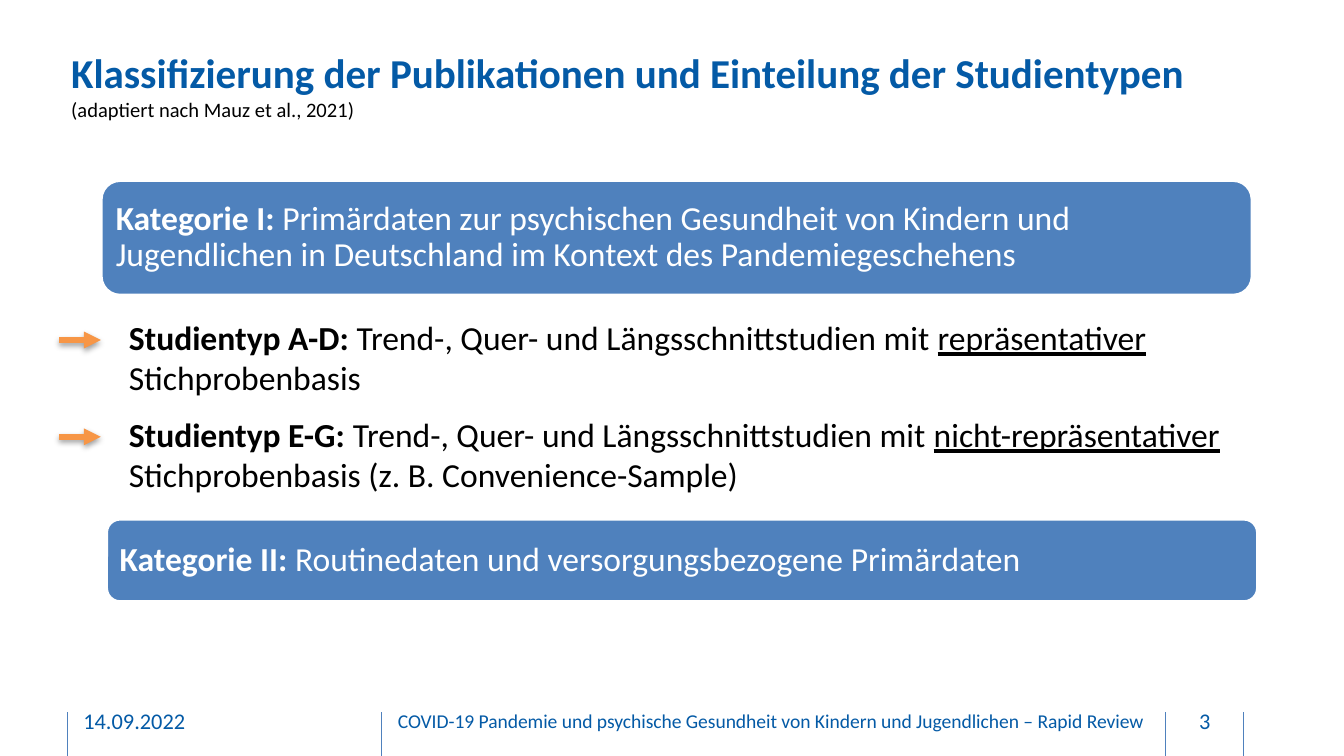
from collections import namedtuple
from dataclasses import dataclass
from lxml import etree
from pptx import Presentation
from pptx import util as u
from pptx.dml.color import RGBColor
from pptx.enum import shapes, text
from pptx.oxml import parse_xml
from pptx.oxml.ns import nsdecls, qn

Box = namedtuple("Box", "left top width height")
Run = namedtuple("Run", "text bold underline", defaults=(False, False))


@dataclass(frozen=True)
class Theme:
    font: str = "Calibri"
    heading: str = "045AA6"
    panel: str = "4F81BD"
    accent: str = "F79646"
    ink: str = "000000"
    paper: str = "FFFFFF"
    title_size: float = 22
    body_size: float = 18
    footer_size: float = 12
    footer_title_size: float = 10.5
    source_size: float = 11


THEME = Theme()
WIDTH = 10
HEIGHT = WIDTH * 9 / 16


def emu(box):
    return [u.Inches(v) for v in box]


def style(font, size, color, bold=None):
    font.name, font.size, font.bold = THEME.font, u.Pt(size), bold
    font.color.rgb = RGBColor.from_string(color)


def frame(sp, insets, anchor=text.MSO_ANCHOR.MIDDLE):
    tf = sp.text_frame
    tf.word_wrap = True
    tf.vertical_anchor = anchor
    tf.margin_left, tf.margin_top, tf.margin_right, tf.margin_bottom = emu(insets)
    return tf


def fill_runs(p, runs, color):
    style(p.font, THEME.body_size, color)
    p.alignment = text.PP_ALIGN.LEFT
    for run in runs:
        r = p.add_run()
        r.text = run.text
        r.font.bold = run.bold
        if run.underline:
            r.font.underline = True


def add_line(s, x1, y1, x2, y2, color, width):
    ln = s.shapes.add_connector(shapes.MSO_CONNECTOR.STRAIGHT, *emu((x1, y1, x2, y2)))
    ln.line.color.rgb = RGBColor.from_string(color)
    ln.line.width = u.Pt(width)
    effects = etree.SubElement(ln._element.spPr, qn("a:effectLst"))
    return ln, effects


def add_arrow(s, x1, x2, y):
    ln, effects = add_line(s, x1, y, x2, y, THEME.accent, 3)
    etree.SubElement(ln.line._get_or_add_ln(), qn("a:tailEnd"), type="triangle")
    effects.append(parse_xml(
        f'<a:outerShdw {nsdecls("a")} blurRad="{u.Pt(3.1)}" dist="{u.Pt(1.6)}" '
        f'dir="5400000" rotWithShape="0"><a:srgbClr val="{THEME.ink}">'
        '<a:alpha val="38000"/></a:srgbClr></a:outerShdw>'))


def add_heading(s, box, title, source):
    sp = s.shapes.title
    sp.left, sp.top, sp.width, sp.height = emu(box)
    tf = frame(sp, (0, 0, 0, 0))
    tf.auto_size = text.MSO_AUTO_SIZE.NONE
    p = tf.paragraphs[0]
    p.alignment = text.PP_ALIGN.LEFT
    r = p.add_run()
    r.text = title
    style(r.font, THEME.title_size, THEME.heading, True)
    p.add_line_break()
    r = p.add_run()
    r.text = source
    style(r.font, THEME.source_size, THEME.ink, False)


def add_category(s, box, runs):
    sp = s.shapes.add_shape(shapes.MSO_SHAPE.ROUNDED_RECTANGLE, *emu(box))
    sp.shadow.inherit = False
    sp.fill.solid()
    sp.fill.fore_color.rgb = RGBColor.from_string(THEME.panel)
    sp.line.color.rgb = RGBColor.from_string(THEME.paper)
    sp.line.width = u.Pt(2)
    p = frame(sp, (0.07, 0.07, 0.07, 0.07)).paragraphs[0]
    p.line_spacing = 0.9
    fill_runs(p, runs, THEME.paper)


def add_study_type(s, box, runs):
    arrow_length, text_start = 0.31, 0.42
    sp = s.shapes.add_textbox(*emu((box.left + text_start, box.top,
                                    box.width - text_start, box.height)))
    tf = frame(sp, (0.1, 0.05, 0.1, 0.05), text.MSO_ANCHOR.TOP)
    fill_runs(tf.paragraphs[0], runs, THEME.ink)
    add_arrow(s, box.left, box.left + arrow_length, box.top + 0.31 * box.height)


def add_footer(s, box, fields):
    bottom = box.top + box.height
    rules = [box.left + offset for offset in (0, 2.34, 8.17, box.width)]
    for x in rules:
        add_line(s, x, box.top + 0.09, x, bottom, THEME.panel, 0.5)
    for (label, size, align, gap), x1, x2 in zip(fields, rules, rules[1:]):
        sp = s.shapes.add_textbox(*emu((x1 + gap, box.top, x2 - x1 - 1.5 * gap, 0.3)))
        p = frame(sp, (0, 0.05, 0, 0.05)).paragraphs[0]
        p.text = label
        p.alignment = align
        style(p.font, size, THEME.heading)


def build_slide(prs):
    s = prs.slides.add_slide(prs.slide_layouts.get_by_name("Title Only"))
    add_heading(s, Box(0.53, 0.24, 8.73, 0.78),
                "Klassifizierung der Publikationen und Einteilung der Studientypen",
                "(adaptiert nach Mauz et al., 2021)")
    add_category(s, Box(0.75, 1.34, 8.57, 0.86), [
        Run("Kategorie I: ", True),
        Run("Primärdaten zur psychischen Gesundheit von Kindern und Jugendlichen "
            "in Deutschland im Kontext des Pandemiegeschehens")])
    studies = [("A-D", "repräsentativer", " Stichprobenbasis"),
               ("E-G", "nicht-repräsentativer",
                " Stichprobenbasis (z. B. Convenience-Sample)")]
    for row, (types, sample, basis) in enumerate(studies):
        add_study_type(s, Box(0.44, 2.31 + 0.72 * row, 8.84, 0.71), [
            Run(f"Studientyp {types}: ", True),
            Run("Trend-, Quer- und Längsschnittstudien mit "),
            Run(sample, underline=True),
            Run(basis)])
    add_category(s, Box(0.79, 3.86, 8.57, 0.62), [
        Run("Kategorie II: ", True),
        Run("Routinedaten und versorgungsbezogene Primärdaten")])
    left, center = text.PP_ALIGN.LEFT, text.PP_ALIGN.CENTER
    add_footer(s, Box(0.5, 5.21, 8.75, HEIGHT - 5.21), [
        ("14.09.2022", THEME.footer_size, left, 0.12),
        ("COVID-19 Pandemie und psychische Gesundheit von Kindern und Jugendlichen "
         "– Rapid Review", THEME.footer_title_size, left, 0.12),
        ("3", THEME.footer_size, center, 0.02)])


def main():
    prs = Presentation()
    prs.slide_width, prs.slide_height = u.Inches(WIDTH), u.Inches(HEIGHT)
    build_slide(prs)
    prs.save("out.pptx")


if __name__ == "__main__":
    main()
